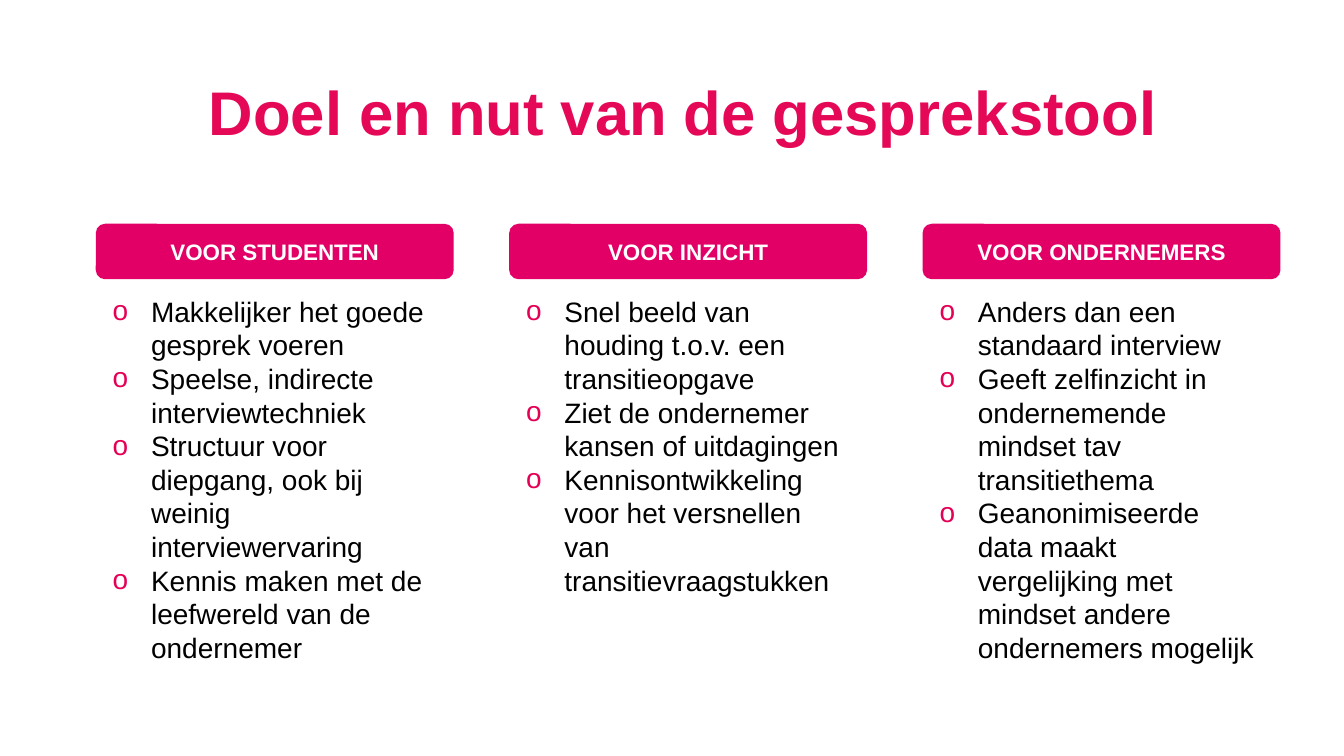
from lxml import etree
from pptx import Presentation
from pptx.dml.color import RGBColor
from pptx.enum.shapes import MSO_SHAPE as Shape
from pptx.enum.text import MSO_ANCHOR as Anchor, MSO_AUTO_SIZE as AutoSize, PP_ALIGN as Align
from pptx.oxml.ns import qn
from pptx.util import Inches, Pt


def rgb(value):
    return RGBColor.from_string(value)


class Deck:
    FONT = "Arial"
    TITLE, HEADER, BULLET = "E50856", "E20066", "E50056"
    WHITE, BLACK = "FFFFFF", "000000"
    LEFT, PITCH, COL_W = 0.95, 4.1, 3.55  # column grid
    HEAD_TOP, HEAD_H, BODY_TOP, BODY_H = 2.22, 0.55, 2.87, 2.6  # rows
    BODY_SHIFT, INDENT = 0.07, 0.38

    def __init__(self, prs):
        self.s = prs.slides.add_slide(prs.slide_layouts[6])

    def col_x(self, col):
        return self.LEFT + col * self.PITCH

    def add_text(self, p, text, size, color, bold=False):
        r = p.add_run()
        r.text = text
        for name, value in {"name": self.FONT, "size": Pt(size), "bold": bold}.items():
            setattr(r.font, name, value)
        r.font.color.rgb = rgb(color)

    def textbox(self, x, y, w, h, **frame):
        sp = self.s.shapes.add_textbox(*map(Inches, (x, y, w, h)))
        tf = sp.text_frame
        for name, value in frame.items():
            setattr(tf, name, value)
        return tf

    def title(self, text):
        tf = self.textbox(2.07, 0.68, 9.5, 0.84, word_wrap=False,
                          auto_size=AutoSize.SHAPE_TO_FIT_TEXT,
                          margin_left=0, margin_right=0)
        self.add_text(tf.paragraphs[0], text, 44, self.TITLE, bold=True)

    def header(self, col, text):
        box = (self.col_x(col), self.HEAD_TOP, self.COL_W, self.HEAD_H)
        sp = self.s.shapes.add_shape(Shape.ROUNDED_RECTANGLE, *map(Inches, box))
        sp.shadow.inherit = False
        sp.fill.solid()
        sp.fill.fore_color.rgb = rgb(self.HEADER)
        sp.line.fill.background()
        tf = sp.text_frame
        tf.vertical_anchor = Anchor.MIDDLE
        p = tf.paragraphs[0]
        p.alignment = Align.CENTER
        self.add_text(p, text, 16, self.WHITE, bold=True)

    def bullets(self, col, width, items):
        tf = self.textbox(self.col_x(col) + self.BODY_SHIFT, self.BODY_TOP,
                          width, self.BODY_H, word_wrap=True)
        for i, item in enumerate(items):
            p = tf.add_paragraph() if i else tf.paragraphs[0]
            self.add_bullet(p)
            self.add_text(p, item, 20, self.BLACK)

    def add_bullet(self, p):
        pPr = p._p.get_or_add_pPr()
        pPr.set("marL", str(Inches(self.INDENT)))
        pPr.set("indent", str(-Inches(self.INDENT)))
        color = etree.SubElement(pPr, qn("a:buClr"))
        etree.SubElement(color, qn("a:srgbClr"), val=self.BULLET)
        etree.SubElement(pPr, qn("a:buFont"), typeface=self.FONT)
        etree.SubElement(pPr, qn("a:buChar"), char="o")


# Header, text width and bullet items of each column
COLUMNS = [
    ("VOOR STUDENTEN", 3.4, [
        "Makkelijker het goede gesprek voeren",
        "Speelse, indirecte interviewtechniek",
        "Structuur voor diepgang, ook bij weinig interviewervaring",
        "Kennis maken met de leefwereld van de ondernemer",
    ]),
    ("VOOR INZICHT", 3.4, [
        "Snel beeld van houding t.o.v. een transitieopgave",
        "Ziet de ondernemer kansen of uitdagingen",
        "Kennisontwikkeling voor het versnellen van transitievraagstukken",
    ]),
    ("VOOR ONDERNEMERS", 3.35, [
        "Anders dan een standaard interview",
        "Geeft zelfinzicht in ondernemende mindset tav transitiethema",
        "Geanonimiseerde data maakt vergelijking met mindset andere ondernemers mogelijk",
    ]),
]


def main():
    prs = Presentation()
    prs.slide_width, prs.slide_height = Inches(13.33), Inches(7.5)
    deck = Deck(prs)

    # Title
    deck.title("Doel en nut van de gesprekstool")

    # Three columns
    for col, (head, width, items) in enumerate(COLUMNS):
        deck.header(col, head)
        deck.bullets(col, width, items)

    prs.save("out.pptx")


if __name__ == "__main__":
    main()
